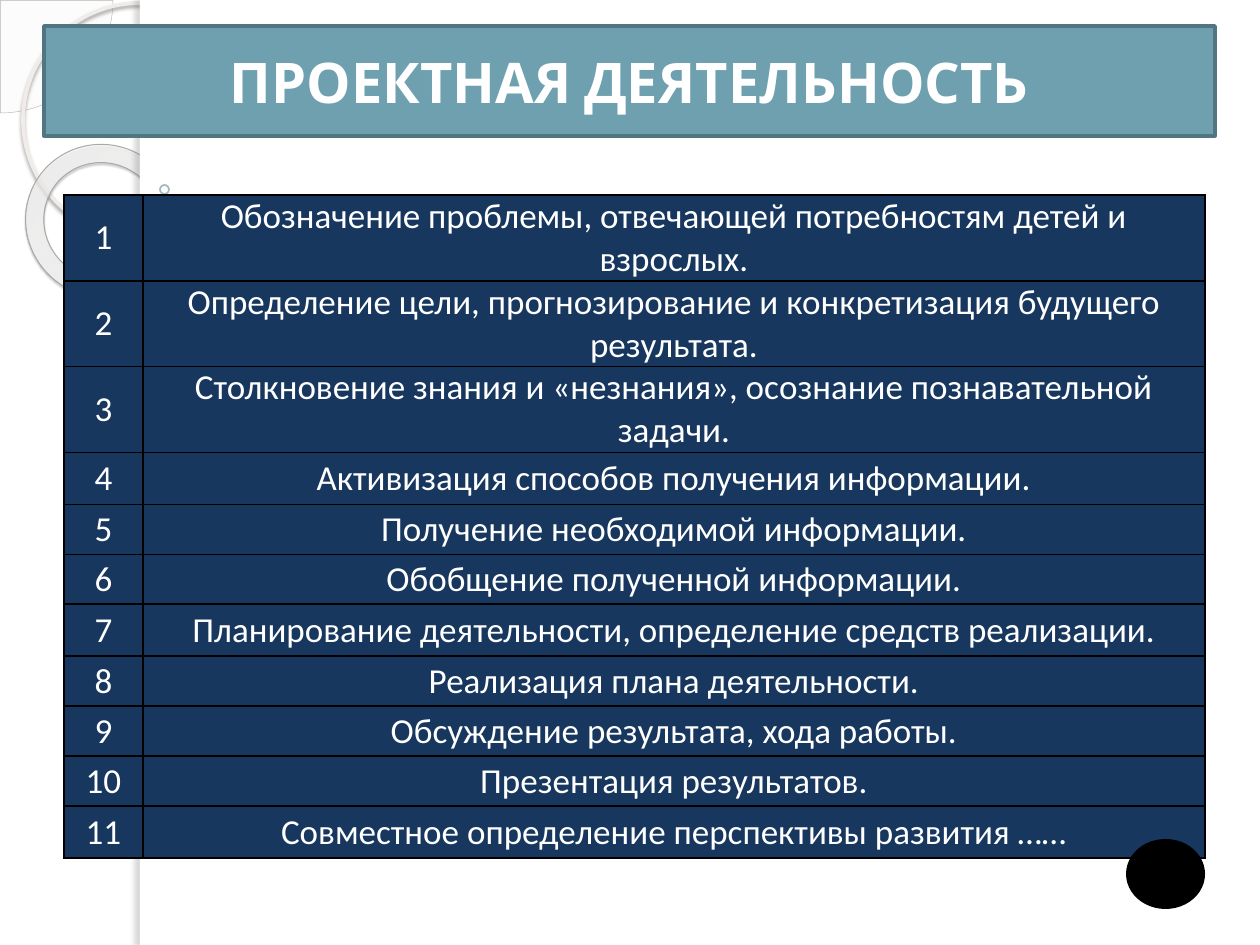
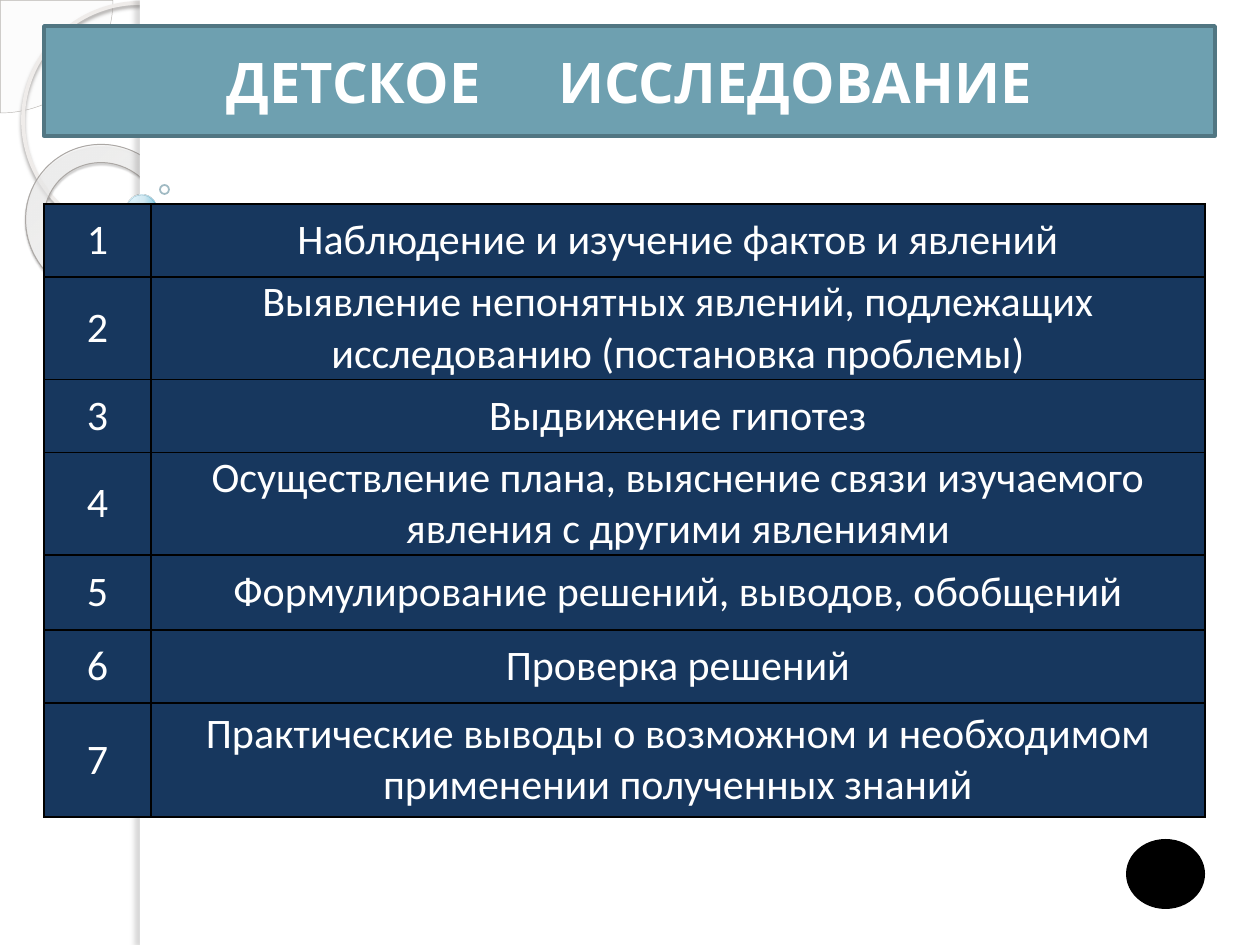
from dataclasses import dataclass
from typing import NamedTuple

from lxml import etree
from pptx import Presentation
from pptx.dml.color import RGBColor
from pptx.enum.shapes import MSO_SHAPE
from pptx.enum.text import MSO_ANCHOR, MSO_AUTO_SIZE, PP_ALIGN
from pptx.oxml.ns import qn
from pptx.util import Pt

PIE, OVAL = MSO_SHAPE.PIE, MSO_SHAPE.OVAL
DONUT, RECTANGLE = MSO_SHAPE.DONUT, MSO_SHAPE.RECTANGLE
MIDDLE, CENTER = MSO_ANCHOR.MIDDLE, PP_ALIGN.CENTER
NO_AUTOFIT = MSO_AUTO_SIZE.NONE

PX = 914400 / 126
WIDTH, HEIGHT = 1260, 945
TITLE_ONLY = 5
TITLE_FONT, BODY_FONT = "Cabin", "Calibri"
WHITE, BLACK, NAVY = "FFFFFF", "000000", "17375E"
TEAL, DARK_TEAL = "6EA0B0", "517682"


class Box(NamedTuple):
    left: int
    top: int
    width: int
    height: int


class Shadow(NamedTuple):
    color: str
    alpha: int
    blur: float
    distance: float
    angle: int


class Stop(NamedTuple):
    position: int
    color: str
    alpha: int


class Gradient(NamedTuple):
    stops: tuple[Stop, ...]
    focus: tuple[int, int, int, int]


@dataclass(frozen=True)
class Figure:
    kind: int
    box: Box
    fill: str | None = None
    fill_alpha: int = 100
    gradient: Gradient | None = None
    line: str | None = None
    line_width: float = 1
    line_alpha: int = 100
    rotation: float = 0
    adjustments: tuple[float, ...] = ()
    shadow: Shadow | None = None


@dataclass(frozen=True)
class StageSlide:
    title: str
    left: int
    top: int
    columns: tuple[int, int]
    margin: int
    size: int
    stages: tuple[tuple[int, str], ...]
    word_gap: int = 0


BANNER = Box(44, 26, 1171, 110)
BUTTON = Figure(OVAL, Box(1126, 839, 79, 70), fill=BLACK)
DECOR = (
    Figure(PIE, Box(-112, -112, 225, 225), fill="F8F8F7", fill_alpha=33,
           line="B7B4B0", line_width=0.25, adjustments=(0, 54)),
    Figure(OVAL, Box(23, 3, 234, 234), line="EFECEA", line_width=2.15,
           shadow=Shadow("9E9B99", 85, 2, 2, 90)),
    Figure(DONUT, Box(25, 145, 155, 152), line="ACA8A5", line_width=0.58,
           rotation=38.6, adjustments=(0.12,),
           gradient=Gradient((Stop(0, "FAFAF9", 70), Stop(70, "FDFDFC", 55),
                              Stop(100, "C0B9B3", 60)), (-408, -50, 508, 150)),
           shadow=Shadow("4F4D4C", 35, 1, 1.2, 75)),
    Figure(RECTANGLE, Box(140, 0, 1120, HEIGHT), fill=WHITE),
    Figure(RECTANGLE, Box(140, 0, 10, HEIGHT), fill=WHITE,
           shadow=Shadow("696867", 25, 3, 3, 180)),
    Figure(OVAL, Box(127, 195, 29, 29), line="669AAB", line_width=0.16, line_alpha=60,
           gradient=Gradient((Stop(0, "DFF5FE", 95), Stop(50, "CCE6F0", 90),
                              Stop(95, "87CBE4", 88), Stop(100, "38B2D9", 85)),
                             (25, 12, 75, 88))),
    Figure(OVAL, Box(160, 185, 9, 9), line="618D9B", line_alpha=60),
)
SLIDES = (
    StageSlide("ПРОЕКТНАЯ ДЕЯТЕЛЬНОСТЬ", 64, 195, (79, 1062), 5, 20, (
        (85, "Обозначение проблемы, отвечающей потребностям детей и взрослых."),
        (85, "Определение цели, прогнозирование и конкретизация будущего результата."),
        (85, "Столкновение знания и «незнания», осознание познавательной задачи."),
        (52, "Активизация способов получения информации."),
        (50, "Получение необходимой информации."),
        (50, "Обобщение полученной информации."),
        (52, "Планирование деятельности, определение средств реализации."),
        (50, "Реализация плана деятельности."),
        (50, "Обсуждение результата, хода работы."),
        (50, "Презентация результатов."),
        (52, "Совместное определение перспективы развития ……"),
    )),
    StageSlide("ДЕТСКОЕ ИССЛЕДОВАНИЕ", 44, 204, (107, 1054), 3, 24, (
        (73, "Наблюдение и изучение фактов и явлений"),
        (102, "Выявление непонятных явлений, подлежащих исследованию (постановка проблемы)"),
        (73, "Выдвижение гипотез"),
        (102, "Осуществление плана, выяснение связи изучаемого явления с другими явлениями"),
        (75, "Формулирование решений, выводов, обобщений"),
        (73, "Проверка решений"),
        (114, "Практические выводы о возможном и необходимом применении полученных знаний"),
    ), word_gap=37),
)


def px(length: int) -> int:
    return round(length * PX)


def rgb(color: str) -> RGBColor:
    return RGBColor.from_string(color)


def child(parent, tag: str, **attributes):
    values = {name: str(value) for name, value in attributes.items()}
    return etree.SubElement(parent, qn(tag), values)


def add_color(parent, color: str, alpha: int) -> None:
    child(child(parent, "a:srgbClr", val=color), "a:alpha", val=alpha * 1000)


def set_alpha(properties, alpha: int) -> None:
    if alpha < 100:
        child(properties.find(f"{qn('a:solidFill')}/{qn('a:srgbClr')}"),
              "a:alpha", val=alpha * 1000)


def apply_gradient(properties, gradient: Gradient) -> None:
    blank = properties.find(qn("a:noFill"))
    fill = etree.Element(qn("a:gradFill"), rotWithShape="1")
    stops = child(fill, "a:gsLst")
    for stop in gradient.stops:
        add_color(child(stops, "a:gs", pos=stop.position * 1000), stop.color, stop.alpha)
    sides = {side: edge * 1000 for side, edge in zip("ltrb", gradient.focus)}
    child(child(fill, "a:path", path="circle"), "a:fillToRect", **sides)
    properties.replace(blank, fill)


def apply_shadow(properties, shadow: Shadow) -> None:
    outer = child(properties.find(qn("a:effectLst")), "a:outerShdw",
                  blurRad=Pt(shadow.blur), dist=Pt(shadow.distance),
                  dir=shadow.angle * 60000, algn="tl", rotWithShape=0)
    add_color(outer, shadow.color, shadow.alpha)


def draw(slide, figure: Figure):
    shape = slide.shapes.add_shape(figure.kind, *map(px, figure.box))
    shape.rotation = figure.rotation
    shape.shadow.inherit = False
    for index, amount in enumerate(figure.adjustments):
        shape.adjustments[index] = amount
    properties = shape.element.spPr
    if figure.fill:
        shape.fill.solid()
        shape.fill.fore_color.rgb = rgb(figure.fill)
        set_alpha(properties, figure.fill_alpha)
    else:
        shape.fill.background()
    if figure.gradient:
        apply_gradient(properties, figure.gradient)
    if figure.line:
        shape.line.color.rgb = rgb(figure.line)
        shape.line.width = Pt(figure.line_width)
        set_alpha(properties.find(qn("a:ln")), figure.line_alpha)
    else:
        shape.line.fill.background()
    if figure.shadow:
        apply_shadow(properties, figure.shadow)
    return shape


def write(frame, text: str, *, size: int, font: str, color: str = WHITE,
          bold: bool = False, word_gap: int = 0) -> None:
    paragraph = frame.paragraphs[0]
    paragraph.alignment = CENTER
    for piece in text.partition(" ") if word_gap else (text,):
        run = paragraph.add_run()
        run.text = piece
        run.font.size = Pt(size)
        run.font.name = font
        run.font.bold = bold
        run.font.color.rgb = rgb(color)
        if piece == " ":
            run._r.get_or_add_rPr().set("spc", str(word_gap * 100))


def add_banner(slide, text: str, word_gap: int) -> None:
    banner = slide.shapes.title
    banner.left, banner.top, banner.width, banner.height = map(px, BANNER)
    banner.fill.solid()
    banner.fill.fore_color.rgb = rgb(TEAL)
    banner.line.color.rgb = rgb(DARK_TEAL)
    banner.line.width = Pt(2)
    frame = banner.text_frame
    frame.word_wrap = True
    frame.auto_size = NO_AUTOFIT
    frame.vertical_anchor = MIDDLE
    write(frame, text, size=32, font=TITLE_FONT, bold=True, word_gap=word_gap)


def border_cell(cell) -> None:
    properties = cell._tc.get_or_add_tcPr()
    for index, side in enumerate(("a:lnL", "a:lnR", "a:lnT", "a:lnB")):
        line = etree.Element(qn(side), w=str(Pt(1)))
        add_color(child(line, "a:solidFill"), BLACK, 100)
        properties.insert(index, line)


def add_stages(slide, content: StageSlide) -> None:
    heights = [height for height, _ in content.stages]
    box = Box(content.left, content.top, sum(content.columns), sum(heights))
    table = slide.shapes.add_table(len(heights), 2, *map(px, box)).table
    table.first_row = table.horz_banding = False
    for column, width in zip(table.columns, content.columns):
        column.width = px(width)
    for number, (height, stage) in enumerate(content.stages, 1):
        row = table.rows[number - 1]
        row.height = px(height)
        for cell, text in zip(row.cells, (str(number), stage)):
            cell.margin_left = cell.margin_right = px(content.margin)
            cell.margin_top = cell.margin_bottom = 0
            cell.vertical_anchor = MIDDLE
            cell.fill.solid()
            cell.fill.fore_color.rgb = rgb(NAVY)
            border_cell(cell)
            write(cell.text_frame, text, size=content.size, font=BODY_FONT)


def decorate_layout(layout, slide) -> None:
    for placeholder in list(layout.placeholders)[1:]:
        placeholder.element.getparent().remove(placeholder.element)
    for figure in DECOR:
        layout.element.cSld.spTree.append(draw(slide, figure).element)


def main() -> None:
    deck = Presentation()
    deck.slide_width, deck.slide_height = px(WIDTH), px(HEIGHT)
    layout = deck.slide_layouts[TITLE_ONLY]
    for index, content in enumerate(SLIDES):
        slide = deck.slides.add_slide(layout)
        if index == 0:
            decorate_layout(layout, slide)
        add_banner(slide, content.title, content.word_gap)
        add_stages(slide, content)
        draw(slide, BUTTON)
    deck.save("out.pptx")


if __name__ == "__main__":
    main()
